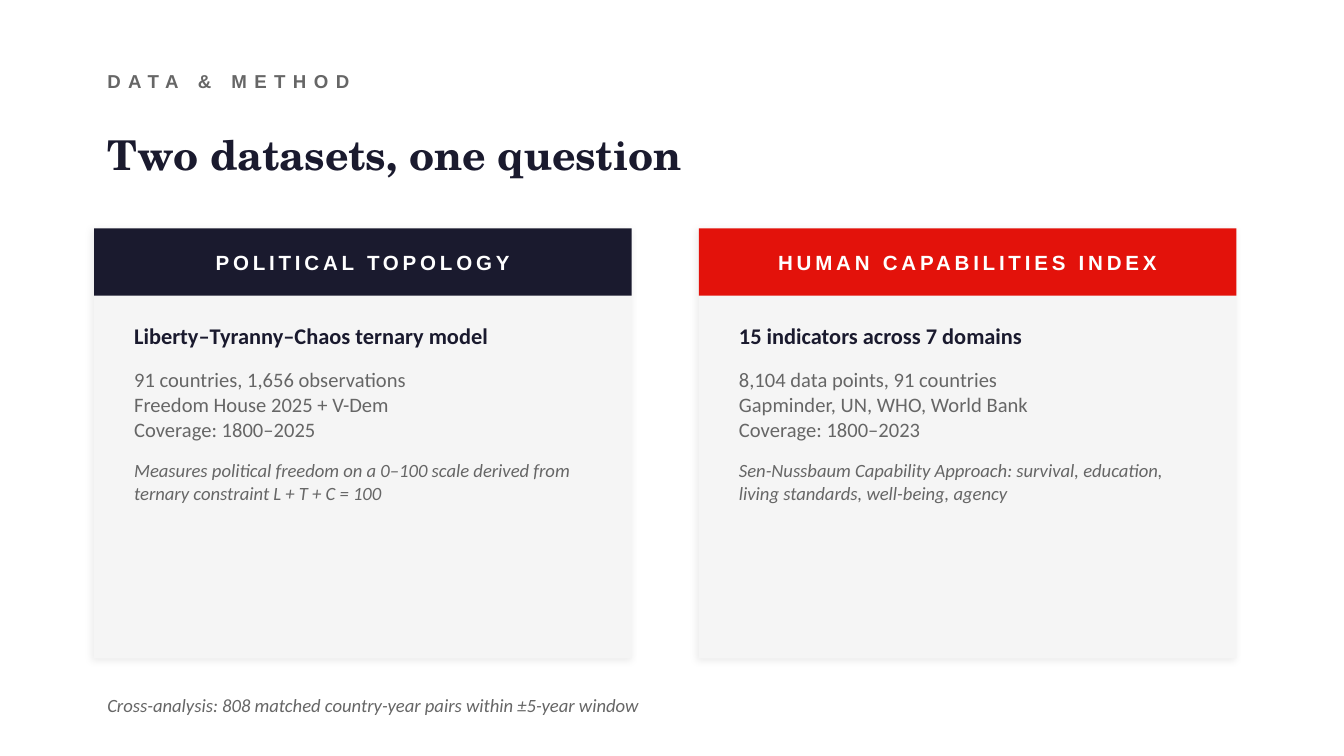
from lxml.etree import SubElement
from pptx import Presentation
from pptx.dml.color import RGBColor
from pptx.enum.shapes import MSO_SHAPE
from pptx.enum.text import MSO_ANCHOR, MSO_AUTO_SIZE, PP_ALIGN
from pptx.oxml.ns import qn
from pptx.util import Emu, Pt

PX = 11430  # 80 px to the inch
SLIDE_WIDTH, SLIDE_HEIGHT = 800, 450

WHITE = RGBColor(0xFF, 0xFF, 0xFF)
NAVY = RGBColor(0x1A, 0x1A, 0x2E)
RED = RGBColor(0xE3, 0x12, 0x0B)
GREY = RGBColor(0x66, 0x66, 0x66)
PALE = RGBColor(0xF5, 0xF5, 0xF5)

SECTION = "DATA & METHOD"
TITLE = "Two datasets, one question"
FOOTNOTE = "Cross-analysis: 808 matched country-year pairs within ±5-year window"
CARDS = [
    {
        "header": "POLITICAL TOPOLOGY",
        "color": NAVY,
        "lead": "Liberty–Tyranny–Chaos ternary model",
        "facts": ["91 countries, 1,656 observations", "Freedom House 2025 + V-Dem",
                  "Coverage: 1800–2025"],
        "note": "Measures political freedom on a 0–100 scale derived from "
                "ternary constraint L + T + C = 100",
    },
    {
        "header": "HUMAN CAPABILITIES INDEX",
        "color": RED,
        "lead": "15 indicators across 7 domains",
        "facts": ["8,104 data points, 91 countries", "Gapminder, UN, WHO, World Bank",
                  "Coverage: 1800–2023"],
        "note": "Sen-Nussbaum Capability Approach: survival, education, "
                "living standards, well-being, agency",
    },
]

LEFT, CARD_TOP = 56, 136
CARD_WIDTH, CARD_HEIGHT, CARD_GAP = 320, 256, 40
HEADER_HEIGHT = 40
INSET, BODY_TOP, BODY_HEIGHT = 16, 188, 192
BLOCK_GAP = Pt(9.6)


def box(left, top, width, height):
    return [Emu(value * PX) for value in (left, top, width, height)]


def add_run(paragraph, text, size, color, font="Calibri", bold=False, italic=False, spacing=0):
    run = paragraph.add_run()
    run.text = text
    run.font.name, run.font.size = font, Pt(size)
    run.font.bold, run.font.italic = bold, italic
    run.font.color.rgb = color
    if spacing:
        run.font._element.set("spc", str(spacing * 100))


def add_text_box(slide, bounds, anchor=MSO_ANCHOR.MIDDLE):
    frame = slide.shapes.add_textbox(*bounds).text_frame
    frame.word_wrap = True
    frame.vertical_anchor = anchor
    return frame


def add_rectangle(slide, bounds, color):
    shape = slide.shapes.add_shape(MSO_SHAPE.RECTANGLE, *bounds)
    shape.shadow.inherit = False
    shape.fill.solid()
    shape.fill.fore_color.rgb = color
    shape.line.fill.background()
    return shape


def add_soft_shadow(shape):
    effects = shape._element.spPr.find(qn("a:effectLst"))
    shadow = SubElement(effects, qn("a:outerShdw"), blurRad=str(Pt(4)), dist=str(Pt(1.5)),
                        dir=str(135 * 60000), algn="bl", rotWithShape="0")
    color = SubElement(shadow, qn("a:srgbClr"), val="000000")
    SubElement(color, qn("a:alpha"), val="8000")


def add_card(slide, left, card):
    panel = add_rectangle(slide, box(left, CARD_TOP, CARD_WIDTH, CARD_HEIGHT), PALE)
    add_soft_shadow(panel)

    header = add_rectangle(slide, box(left, CARD_TOP, CARD_WIDTH, HEADER_HEIGHT), card["color"])
    header.text_frame.vertical_anchor = MSO_ANCHOR.MIDDLE
    paragraph = header.text_frame.paragraphs[0]
    paragraph.alignment = PP_ALIGN.CENTER
    add_run(paragraph, card["header"], 11, WHITE, "Arial", bold=True, spacing=2)

    bounds = box(left + INSET, BODY_TOP, CARD_WIDTH - 2 * INSET, BODY_HEIGHT)
    frame = add_text_box(slide, bounds, MSO_ANCHOR.TOP)
    add_run(frame.paragraphs[0], card["lead"], 12, NAVY, bold=True)
    for index, fact in enumerate(card["facts"]):
        paragraph = frame.add_paragraph()
        if index == 0:
            paragraph.space_before = BLOCK_GAP
        add_run(paragraph, fact, 11, GREY)
    paragraph = frame.add_paragraph()
    paragraph.space_before = BLOCK_GAP
    add_run(paragraph, card["note"], 10, GREY, italic=True)


def main():
    presentation = Presentation()
    presentation.slide_width = Emu(SLIDE_WIDTH * PX)
    presentation.slide_height = Emu(SLIDE_HEIGHT * PX)
    slide = presentation.slides.add_slide(presentation.slide_layouts.get_by_name("Title Only"))
    slide.background.fill.solid()
    slide.background.fill.fore_color.rgb = WHITE

    section = add_text_box(slide, box(LEFT, 32, 640, 32))
    add_run(section.paragraphs[0], SECTION, 10, GREY, "Arial", bold=True, spacing=4)

    title = slide.shapes.title
    title.left, title.top, title.width, title.height = box(LEFT, 72, 640, 40)
    title.text_frame.auto_size = MSO_AUTO_SIZE.NONE
    title.text_frame.vertical_anchor = MSO_ANCHOR.MIDDLE
    paragraph = title.text_frame.paragraphs[0]
    paragraph.alignment = PP_ALIGN.LEFT
    add_run(paragraph, TITLE, 22, NAVY, "TeX Gyre Schola", bold=True)

    for index, card in enumerate(CARDS):
        add_card(slide, LEFT + index * (CARD_WIDTH + CARD_GAP), card)

    footnote = add_text_box(slide, box(LEFT, 408, 680, 24))
    add_run(footnote.paragraphs[0], FOOTNOTE, 10, GREY, italic=True)

    presentation.save("out.pptx")


if __name__ == "__main__":
    main()
